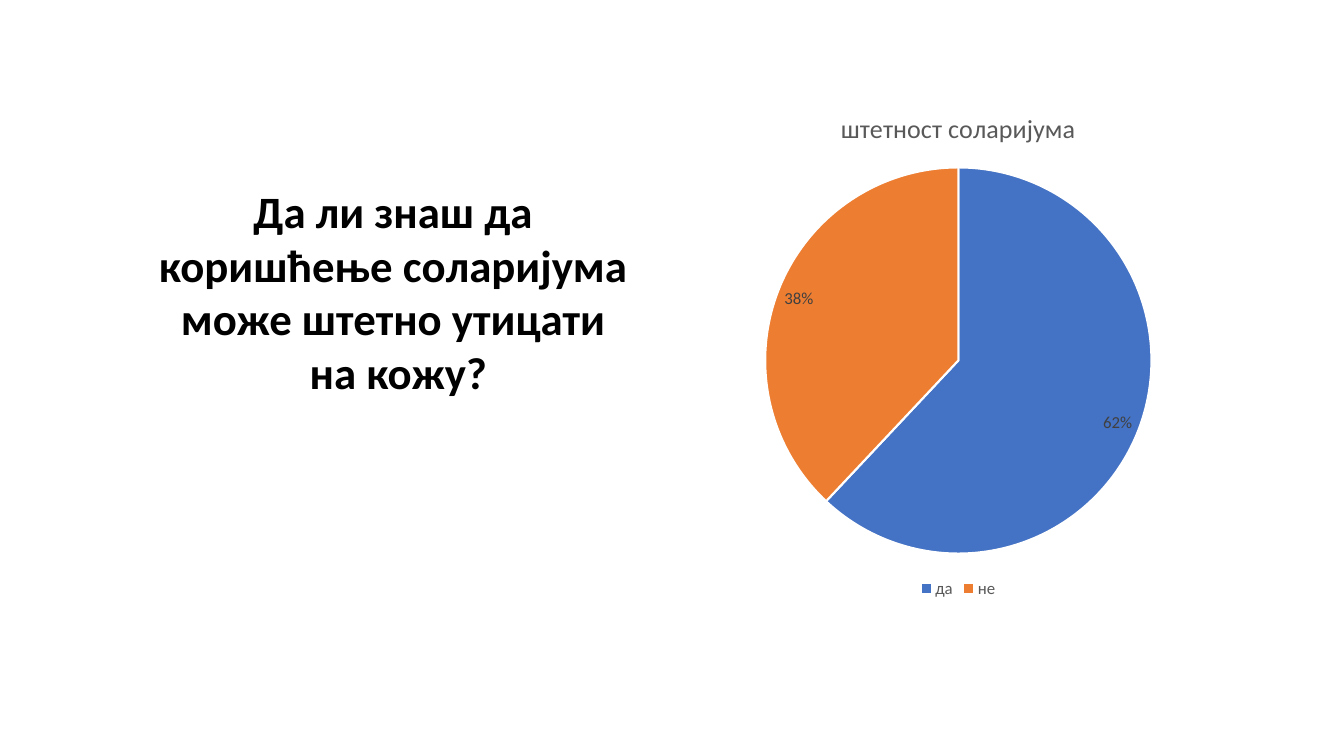
from dataclasses import dataclass

import pptx
import pptx.chart.data
import pptx.dml.color
import pptx.enum.chart
import pptx.enum.text
import pptx.util

Inches = pptx.util.Inches


@dataclass(frozen=True)
class Theme:
    font: str = "Calibri"
    question_color: str = "000000"
    caption_color: str = "595959"
    label_color: str = "404040"
    slice_colors: tuple = ("4472C4", "ED7D31")
    slice_border: str = "FFFFFF"
    question_size: float = 32
    caption_size: float = 18.6
    label_size: float = 12


THEME = Theme()


def rgb(color):
    return pptx.dml.color.RGBColor.from_string(color)


def format_font(font, size, color, bold=False):
    font.name = THEME.font
    font.size = pptx.util.Pt(size)
    font.bold = bold
    font.color.rgb = rgb(color)


def write_text(frame, lines, align=pptx.enum.text.PP_ALIGN.CENTER, **font_format):
    """Write one paragraph per line, all in the same format."""
    for index, line in enumerate(lines):
        para = frame.add_paragraph() if index else frame.paragraphs[0]
        para.alignment = align
        span = para.add_run()
        span.text = line
        format_font(span.font, **font_format)


def place_question(page, left, top, width, height):
    box = page.shapes.title
    box.left, box.top = Inches(left), Inches(top)
    box.width, box.height = Inches(width), Inches(height)
    frame = box.text_frame
    frame.word_wrap = True
    frame.auto_size = pptx.enum.text.MSO_AUTO_SIZE.SHAPE_TO_FIT_TEXT
    frame.vertical_anchor = pptx.enum.text.MSO_ANCHOR.TOP
    write_text(
        frame,
        ["Да ли знаш да коришћење соларијума може штетно утицати", " на кожу?"],
        size=THEME.question_size, color=THEME.question_color, bold=True,
    )


def place_answers_pie(page, left, top, width, height):
    caption = "штетност соларијума"
    answers = pptx.chart.data.CategoryChartData(number_format="0%")
    answers.categories = ["да", "не"]
    answers.add_series(caption, [0.62, 0.38])
    chart = page.shapes.add_chart(
        pptx.enum.chart.XL_CHART_TYPE.PIE,
        Inches(left), Inches(top), Inches(width), Inches(height), answers,
    ).chart
    format_font(chart.font, THEME.label_size, THEME.caption_color)

    chart.has_title = True
    write_text(chart.chart_title.text_frame, [caption],
               size=THEME.caption_size, color=THEME.caption_color)
    chart.chart_title.include_in_layout = False

    chart.has_legend = True
    chart.legend.position = pptx.enum.chart.XL_LEGEND_POSITION.BOTTOM
    chart.legend.include_in_layout = False
    format_font(chart.legend.font, THEME.label_size, THEME.caption_color)

    plot = chart.plots[0]
    plot.vary_by_categories = True
    series = plot.series[0]
    for index, color in enumerate(THEME.slice_colors):
        pie_slice = series.points[index].format
        pie_slice.fill.solid()
        pie_slice.fill.fore_color.rgb = rgb(color)
        pie_slice.line.color.rgb = rgb(THEME.slice_border)
        pie_slice.line.width = pptx.util.Pt(1.5)

    labels = series.data_labels
    labels.show_value = True
    labels.number_format = "0%"
    labels.number_format_is_linked = False
    labels.position = pptx.enum.chart.XL_LABEL_POSITION.BEST_FIT
    format_font(labels.font, THEME.label_size, THEME.label_color)


def main():
    deck = pptx.Presentation()
    deck.slide_width, deck.slide_height = Inches(13.33), Inches(7.5)
    title_only = deck.slide_layouts.get_by_name("Title Only")
    page = deck.slides.add_slide(title_only)
    place_answers_pie(page, 5.91, 0.89, 7.19, 5.09)
    place_question(page, 1.34, 1.77, 5.12, 2.26)
    deck.save("out.pptx")


if __name__ == "__main__":
    main()
